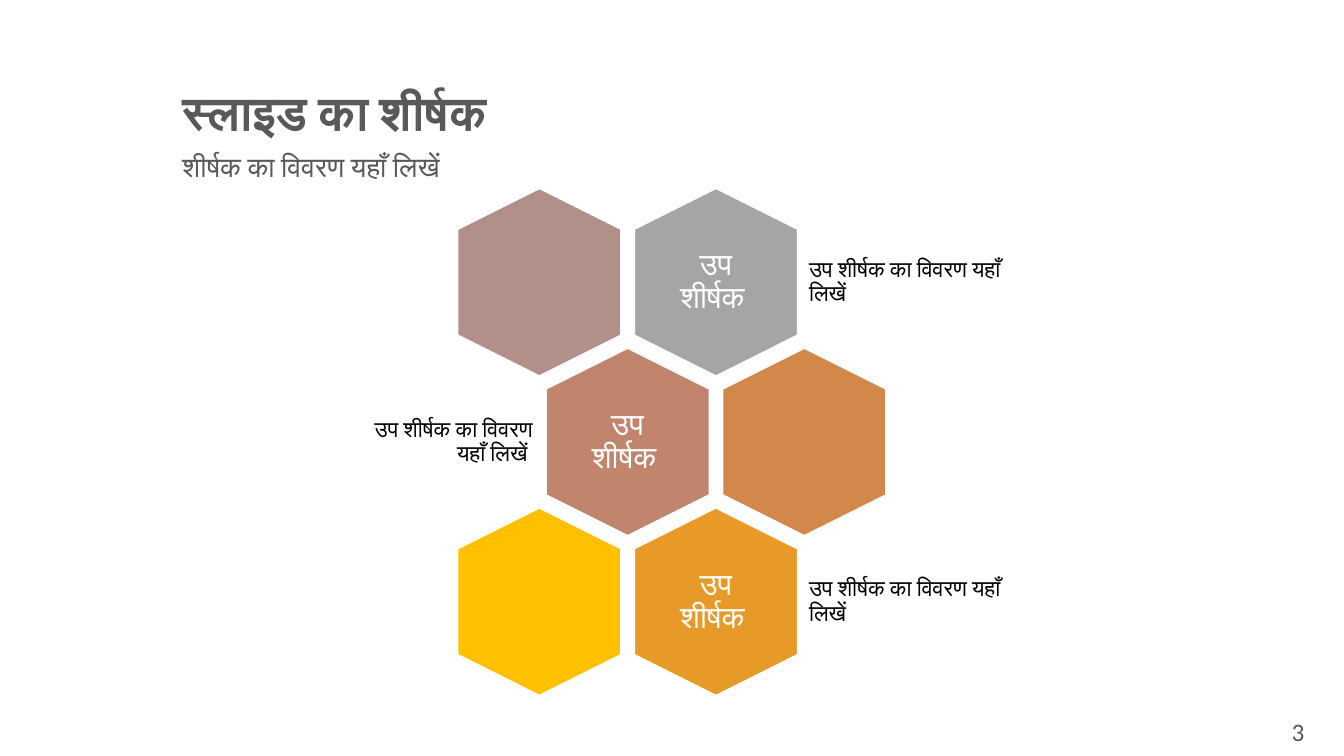
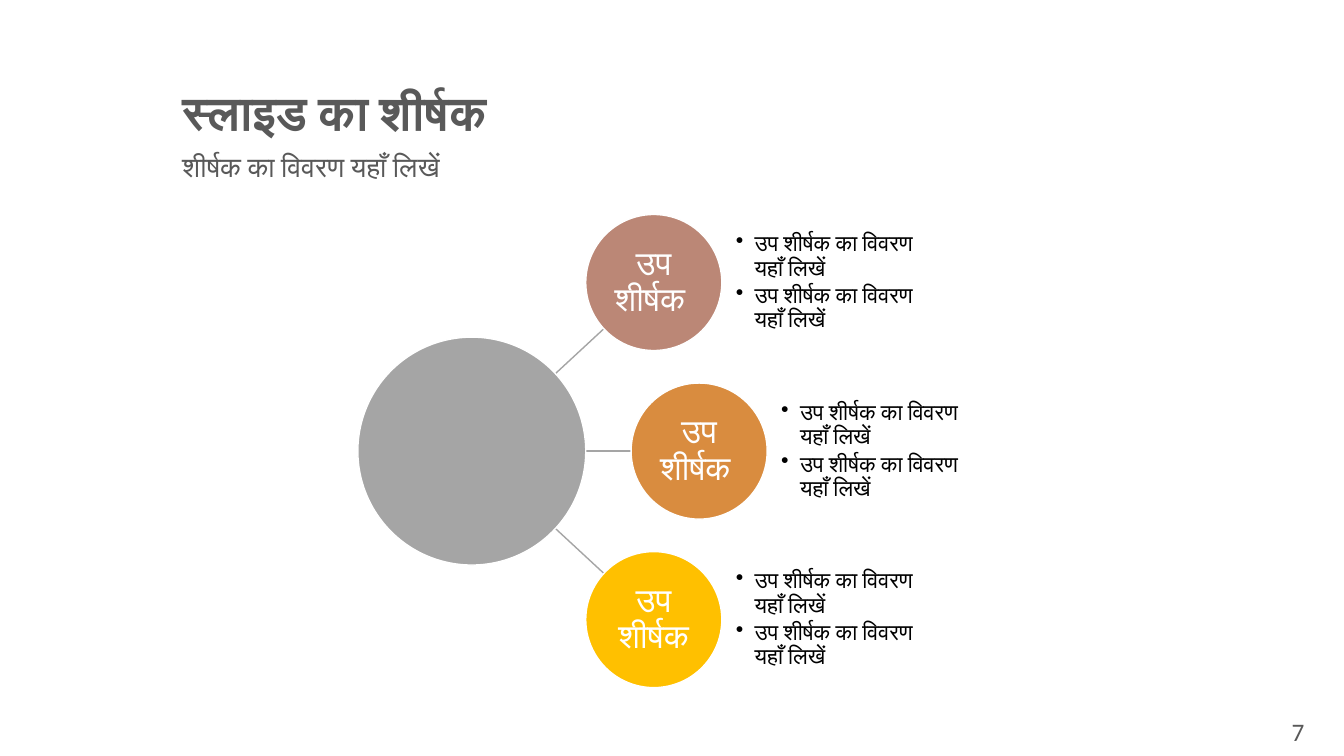
import math
from dataclasses import dataclass

from lxml import etree
from pptx import Presentation
from pptx import util as u
from pptx.dml.color import RGBColor
from pptx.enum import shapes, text
from pptx.oxml import ns

FONT = "Calibri"
WHITE, BLACK, GREY, INK = "FFFFFF", "000000", "A5A5A5", "595959"
GOLD = "FFC000"
LEFT, CENTER, RIGHT = text.PP_ALIGN.LEFT, text.PP_ALIGN.CENTER, text.PP_ALIGN.RIGHT
TOP, MIDDLE = text.MSO_ANCHOR.TOP, text.MSO_ANCHOR.MIDDLE

TITLE = "स्लाइड का शीर्षक"
SUBTITLE = "शीर्षक का विवरण यहाँ लिखें"
HEADING = "उप शीर्षक "
DETAIL = "उप शीर्षक का विवरण यहाँ लिखें"

# Honeycomb: columns step by half a cell pitch
HEX_LONG, HEX_SHORT = 133.9, 116.6
HEX_X, HEX_Y, HALF_STEP, ROW_STEP = 385.2, 201.6, 63.1, 114.1
# Hub and its satellites
HUB_X, HUB_Y, HUB_RADIUS = 337.0, 322.2, 81.4
SATELLITE_RADIUS, SATELLITE_STEP = 48.6, 120.4


@dataclass(frozen=True)
class Box:
    left: float
    top: float
    width: float
    height: float

    def lengths(self) -> tuple:
        return tuple(u.Pt(value) for value in (self.left, self.top, self.width, self.height))


@dataclass(frozen=True)
class Style:
    size: float
    color: str
    align: text.PP_ALIGN = LEFT
    anchor: text.MSO_ANCHOR = MIDDLE
    bold: bool = False
    inset_x: float = 5.04
    inset_y: float = 5.04
    line_spacing: float = 0.9
    space_after: float = 0
    bullet: bool = False


@dataclass(frozen=True)
class Cell:
    column: int  # in half steps
    row: int
    color: str
    heading: str = ""
    detail: str = ""
    side: text.PP_ALIGN = LEFT


@dataclass(frozen=True)
class Satellite:
    x: float
    color: str
    heading: str = HEADING


TITLE_STYLE = Style(34, INK, anchor=TOP, bold=True, inset_x=7.2, inset_y=3.6)
SUBTITLE_STYLE = Style(20, INK, anchor=TOP, inset_x=7.2, inset_y=3.6)
NUMBER_STYLE = Style(18, INK, CENTER, TOP, inset_x=7.2, inset_y=3.6, line_spacing=1)
HEX_STYLE = Style(22, WHITE, CENTER, inset_x=6.5, inset_y=6.5)
CIRCLE_STYLE = Style(24, WHITE, CENTER, inset_x=1.4, inset_y=1.4)
BULLET_STYLE = Style(16, BLACK, inset_x=0, inset_y=0, space_after=2.4, bullet=True)

CELLS = [
    Cell(2, 0, GREY, HEADING, DETAIL),
    Cell(0, 0, "B1908A"),
    Cell(1, 1, "C0856C", HEADING, DETAIL + " ", RIGHT),
    Cell(3, 1, "D2884B"),
    Cell(2, 2, "E79A27", HEADING, DETAIL),
    Cell(0, 2, GOLD),
]
SATELLITES = [
    Satellite(467, "BB8776"),
    Satellite(499.4, "D98C3F"),
    Satellite(467, GOLD, HEADING.strip()),
]


def rgb(value: str) -> RGBColor:
    return RGBColor.from_string(value)


def write(shape, lines: list[str], style: Style) -> None:
    """Fill a shape, text box or placeholder with styled paragraphs."""
    frame = shape.text_frame
    frame.word_wrap = True
    frame.auto_size = text.MSO_AUTO_SIZE.NONE
    frame.vertical_anchor = style.anchor
    frame.margin_left = frame.margin_right = u.Pt(style.inset_x)
    frame.margin_top = frame.margin_bottom = u.Pt(style.inset_y)
    for index, line in enumerate(lines):
        paragraph = frame.add_paragraph() if index else frame.paragraphs[0]
        paragraph.alignment = style.align
        paragraph.line_spacing = style.line_spacing
        paragraph.space_before = u.Pt(0)
        paragraph.space_after = u.Pt(style.space_after)
        if style.bullet:
            properties = paragraph._p.get_or_add_pPr()
            properties.set("marL", str(u.Pt(13.5)))
            properties.set("indent", str(u.Pt(-13.5)))
            etree.SubElement(properties, ns.qn("a:buChar")).set("char", "•")
        run = paragraph.add_run()
        run.text = line
        run.font.name = FONT
        run.font.size = u.Pt(style.size)
        run.font.bold = style.bold
        run.font.color.rgb = rgb(style.color)
        # Devanagari takes the complex-script font
        script_font = etree.SubElement(run._r.get_or_add_rPr(), ns.qn("a:cs"))
        script_font.set("typeface", FONT)


def add_text(slide, box: Box, lines: list[str], style: Style) -> None:
    write(slide.shapes.add_textbox(*box.lengths()), lines, style)


def add_filled(slide, kind: shapes.MSO_SHAPE, center_x: float, center_y: float,
               width: float, height: float, color: str):
    box = Box(center_x - width / 2, center_y - height / 2, width, height)
    shape = slide.shapes.add_shape(kind, *box.lengths())
    shape.shadow.inherit = False
    shape.fill.solid()
    shape.fill.fore_color.rgb = rgb(color)
    shape.line.color.rgb = rgb(WHITE)
    shape.line.width = u.Pt(1)
    return shape


def add_line(slide, *ends: float) -> None:
    line = slide.shapes.add_connector(shapes.MSO_CONNECTOR.STRAIGHT, *(u.Pt(end) for end in ends))
    line.line.color.rgb = rgb(GREY)
    line.line.width = u.Pt(1)
    etree.SubElement(line._element.spPr, ns.qn("a:effectLst"))


def add_titled_slide(presentation, number: int):
    """Title, subtitle and page number shared by the slides."""
    slide = presentation.slides.add_slide(presentation.slide_layouts[5])
    title = slide.shapes.title
    title.left, title.top, title.width, title.height = Box(123.1, 60.5, 692, 39.6).lengths()
    write(title, [TITLE], TITLE_STYLE)
    add_text(slide, Box(123.1, 105.8, 692, 45.4), [SUBTITLE], SUBTITLE_STYLE)
    add_text(slide, Box(894.2, 508.3, 66, 31.7), [str(number)], NUMBER_STYLE)
    return slide


def draw_honeycomb(slide) -> None:
    for cell in CELLS:
        x = HEX_X + cell.column * HALF_STEP
        y = HEX_Y + cell.row * ROW_STEP
        hexagon = add_filled(slide, shapes.MSO_SHAPE.HEXAGON, x, y, HEX_LONG, HEX_SHORT, cell.color)
        hexagon.rotation = 90
        if cell.heading:
            add_text(slide, Box(x - 40.3, y - 46, 80.6, 92), [cell.heading], HEX_STYLE)
        if cell.detail:
            width = 150 if cell.side == LEFT else 144.7
            left = x + 61.5 if cell.side == LEFT else x - 62.8 - width
            style = Style(16, BLACK, cell.side)
            add_text(slide, Box(left, y - 40.3, width, 80.6), [cell.detail], style)


def draw_hub(slide) -> None:
    # Spokes run along the line between the centres, from edge to edge
    rows = [(satellite, HUB_Y + (index - 1) * SATELLITE_STEP)
            for index, satellite in enumerate(SATELLITES)]
    for satellite, y in rows:
        angle = math.atan2(y - HUB_Y, satellite.x - HUB_X)
        across, down = math.cos(angle), math.sin(angle)
        add_line(slide, HUB_X + HUB_RADIUS * across, HUB_Y + HUB_RADIUS * down,
                 satellite.x - SATELLITE_RADIUS * across, y - SATELLITE_RADIUS * down)

    oval = shapes.MSO_SHAPE.OVAL
    add_filled(slide, oval, HUB_X, HUB_Y, 2 * HUB_RADIUS, 2 * HUB_RADIUS, GREY)
    diameter = 2 * SATELLITE_RADIUS
    for satellite, y in rows:
        circle = add_filled(slide, oval, satellite.x, y, diameter, diameter, satellite.color)
        write(circle, [satellite.heading], CIRCLE_STYLE)
        bullets = Box(satellite.x + SATELLITE_RADIUS + 10, y - SATELLITE_RADIUS, 146, diameter)
        add_text(slide, bullets, [DETAIL] * 2, BULLET_STYLE)


def main() -> None:
    presentation = Presentation()
    presentation.slide_width, presentation.slide_height = u.Pt(960), u.Pt(540)
    draw_honeycomb(add_titled_slide(presentation, 3))
    draw_hub(add_titled_slide(presentation, 7))
    presentation.save("out.pptx")


if __name__ == "__main__":
    main()
